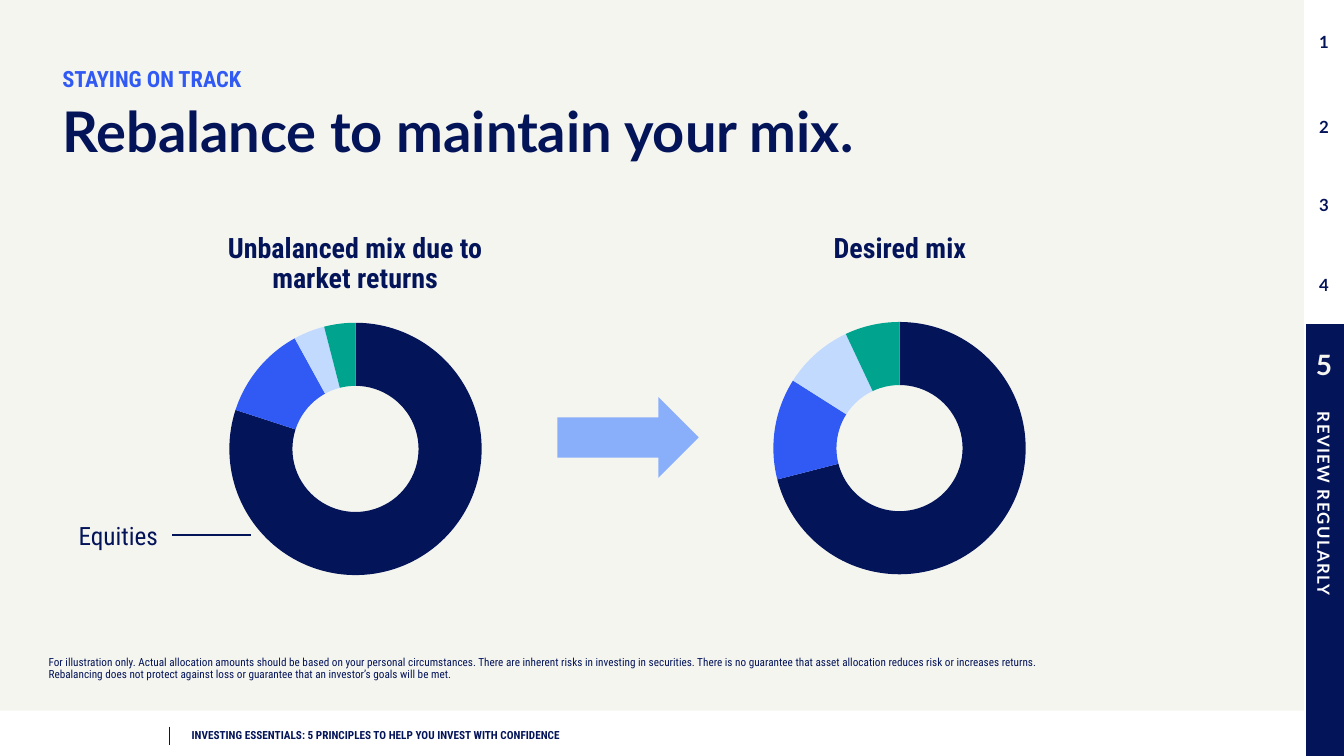
from dataclasses import dataclass
from lxml import etree
from pptx import Presentation
from pptx.chart.data import CategoryChartData
from pptx.dml.color import RGBColor
from pptx.enum.chart import XL_CHART_TYPE as CHART
from pptx.enum.shapes import MSO_CONNECTOR as CONN, MSO_SHAPE as SHAPE
from pptx.enum.text import MSO_ANCHOR as ANCHOR, MSO_AUTO_SIZE as AUTO, PP_ALIGN as ALIGN
from pptx.oxml import parse_xml
from pptx.oxml.ns import nsdecls, qn
from pptx.util import Cm, Pt


@dataclass(frozen=True)
class Theme:
    navy: str = "041459"
    blue: str = "305AF3"
    arrow: str = "8AAFFA"
    pale: str = "C3DAFF"
    green: str = "00A38D"
    paper: str = "F5F5F0"
    white: str = "FFFFFF"
    head_font: str = "Lato"
    text_font: str = "Roboto Condensed"
    chart_font: str = "Roboto"
    title: int = 40
    heading: int = 20
    label: int = 18
    eyebrow: int = 16
    tab: int = 12
    chart: int = 10
    small: int = 8


class SlideBuilder:
    def __init__(self, slide, theme):
        self.s = slide
        self.t = theme

    def fill_text(self, sp, text, size, color=None, font=None, bold=True,
                  spacing=None, align=ALIGN.LEFT, **frame):
        tf = sp.text_frame
        settings = {"word_wrap": True, "auto_size": AUTO.NONE,
                    "vertical_anchor": ANCHOR.TOP}
        for name, value in {**settings, **frame}.items():
            setattr(tf, name, value)
        p = tf.paragraphs[0]
        p.text = text
        for name, value in {"alignment": align, "line_spacing": spacing,
                            "space_before": Pt(0)}.items():
            setattr(p, name, value)
        style = {"name": font or self.t.text_font, "size": Pt(size), "bold": bold}
        for r in p.runs:
            for name, value in style.items():
                setattr(r.font, name, value)
            r.font.color.rgb = RGBColor.from_string(color or self.t.navy)
        return tf

    def text(self, box, text, size, **style):
        sp = self.s.shapes.add_textbox(*map(Cm, box))
        return self.fill_text(sp, text, size, **style)

    def placeholder(self, sp, box, text, size, **style):
        for name, value in zip(("left", "top", "width", "height"), box):
            setattr(sp, name, Cm(value))
        self.s.shapes._spTree.append(sp._element)
        tf = self.fill_text(sp, text, size, spacing=0.9, **style)
        pPr = tf.paragraphs[0]._p.get_or_add_pPr()
        pPr.set("marL", "0")
        pPr.set("indent", "0")
        etree.SubElement(pPr, qn("a:buNone"))

    def shape(self, kind, box, fill):
        sp = self.s.shapes.add_shape(kind, *map(Cm, box))
        sp.shadow.inherit = False
        sp.fill.solid()
        sp.fill.fore_color.rgb = RGBColor.from_string(fill)
        sp.line.fill.background()
        return sp

    def tab(self, box, text, size, fill, color, vertical=False):
        sp = self.shape(SHAPE.RECTANGLE, box, fill)
        tf = self.fill_text(sp, text, size, color=color, font=self.t.head_font,
                            vertical_anchor=ANCHOR.MIDDLE,
                            align=ALIGN.LEFT if vertical else ALIGN.CENTER)
        if vertical:
            tf._txBody.bodyPr.set("vert", "vert")
            tf.paragraphs[0].runs[0]._r.get_or_add_rPr().set("spc", "100")

    def line(self, ends, color, width):
        ln = self.s.shapes.add_connector(CONN.STRAIGHT, *map(Cm, ends))
        ln.line.color.rgb = RGBColor.from_string(color)
        ln.line.width = Pt(width)
        etree.SubElement(ln._element.spPr, qn("a:effectLst"))

    def doughnut(self, box, values):
        data = CategoryChartData()
        data.categories = [str(n + 1) for n in range(len(values))]
        data.add_series("Series 1", values)
        chart = self.s.shapes.add_chart(CHART.DOUGHNUT, *map(Cm, box), data).chart
        for name in ("has_title", "has_legend"):
            setattr(chart, name, False)
        chart.font.name = self.t.chart_font
        chart.font.size = Pt(self.t.chart)
        chart.font.color.rgb = RGBColor.from_string(self.t.navy)
        plot = chart.plots[0]
        plot.vary_by_categories = True
        colors = (self.t.navy, self.t.blue, self.t.pale, self.t.green)
        for i, color in enumerate(colors):
            point = plot.series[0].points[i].format
            point.fill.solid()
            point.fill.fore_color.rgb = RGBColor.from_string(color)
            point.line.fill.background()
        area = chart._chartSpace.chart.plotArea
        area.find(".//" + qn("c:holeSize")).set("val", "65")
        for old in area.findall(qn("c:layout")):
            area.remove(old)
        height = 0.9
        width = round(height * box[3] / box[2], 2)
        area.insert(0, parse_xml(
            f'<c:layout {nsdecls("c")}><c:manualLayout><c:layoutTarget val="inner"/>'
            '<c:xMode val="edge"/><c:yMode val="edge"/>'
            f'<c:x val="{(1 - width) / 2:.3f}"/><c:y val="{(1 - height) / 2:.3f}"/>'
            f'<c:w val="{width}"/><c:h val="{height}"/>'
            '</c:manualLayout></c:layout>'))


def main():
    prs = Presentation()
    prs.slide_width, prs.slide_height = Cm(33.87), Cm(19.05)
    s = prs.slides.add_slide(prs.slide_layouts[1])
    t = Theme()
    b = SlideBuilder(s, t)
    title, body = s.placeholders[0], s.placeholders[1]

    b.line((4.27, 18.31, 4.27, 18.77), t.navy, 1)
    b.text((4.83, 18.36, 17.6, 0.33),
           "INVESTING ESSENTIALS: 5 PRINCIPLES TO HELP YOU INVEST WITH CONFIDENCE",
           t.small, margin_left=0, margin_top=0, margin_right=0, margin_bottom=0)

    tab_left, tab_width = 32.87, 1
    b.tab((tab_left, 8.15, tab_width, 2.06), "5", t.heading, t.navy, t.paper)
    b.tab((tab_left, 10.13, tab_width, 8.92), "REVIEW REGULARLY", t.tab,
          t.navy, t.white, vertical=True)
    for number, top, height in (("4", 6.2, 1.96), ("3", 4.09, 2.13),
                                ("2", 2.13, 2.13), ("1", 0, 2.13)):
        b.tab((tab_left, top, tab_width, height), number, t.tab, t.white, t.navy)
    b.shape(SHAPE.RECTANGLE, (0, 0, 32.89, 17.91), t.paper)
    b.line((32.89, 0, 32.89, 19.05), t.white, 1.5)

    b.text((1.32, 1.6, 28.6, 1.17), "STAYING ON TRACK", t.eyebrow,
           color=t.blue, spacing=0.9)
    b.placeholder(title, (1.32, 2.49, 28.6, 1.65),
                  "Rebalance to maintain your mix.", t.title, font=t.head_font)

    mixes = (
        ("Unbalanced mix due to market returns", (5.05, 5.77, 7.8, 1.8),
         (4.83, 7.77, 8.26, 7.09), (80, 12, 4, 4)),
        ("Desired mix", (19.91, 5.77, 5.54, 1.8),
         (18.54, 7.75, 8.26, 7.09), (71, 13, 9, 7)),
    )
    for heading, heading_box, chart_box, values in mixes:
        b.doughnut(chart_box, values)
        b.text(heading_box, heading, t.heading, align=ALIGN.CENTER, spacing=0.9)
    b.shape(SHAPE.RIGHT_ARROW, (14.05, 10.01, 3.56, 2.03), t.arrow)

    b.placeholder(
        body, (0.97, 14.88, 31.09, 2.41),
        "For illustration only. Actual allocation amounts should be based on your "
        "personal circumstances. There are inherent risks in investing in securities. "
        "There is no guarantee that asset allocation reduces risk or increases returns.\v"
        "Rebalancing does not protect against loss or guarantee that an investor’s "
        "goals will be met.",
        t.small, bold=False, vertical_anchor=ANCHOR.BOTTOM)
    b.text((1.73, 12.98, 2.64, 1.02), "Equities", t.label, bold=False,
           word_wrap=False, auto_size=AUTO.SHAPE_TO_FIT_TEXT)
    b.line((4.34, 13.49, 6.32, 13.49), t.navy, 1.5)

    prs.save("out.pptx")


if __name__ == "__main__":
    main()
